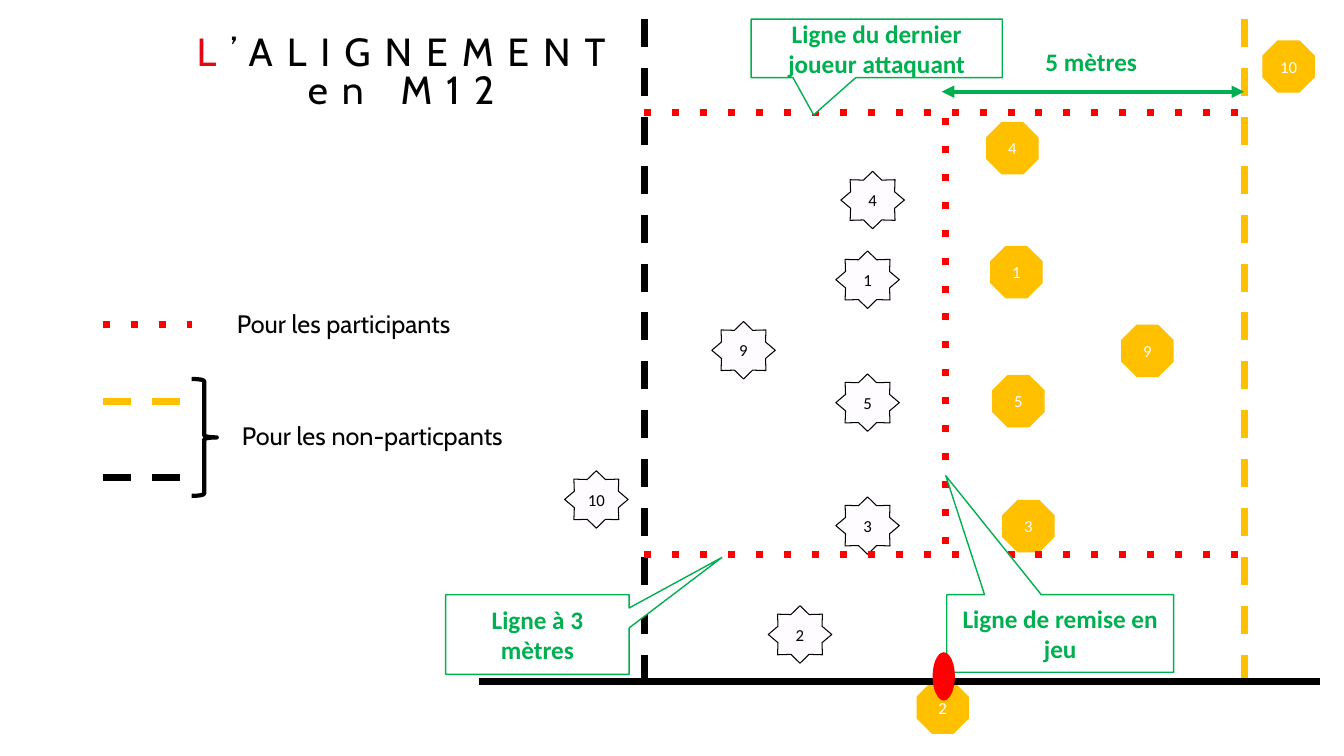
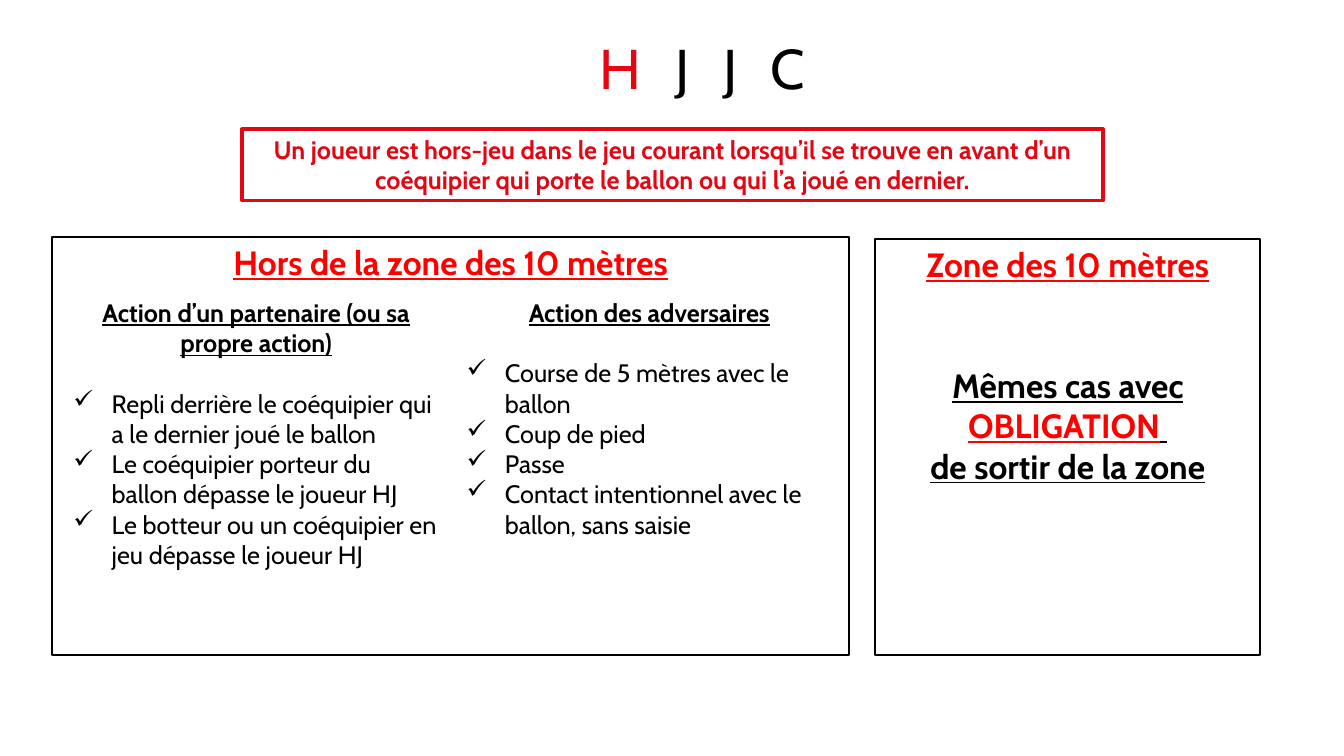
from lxml import etree
from pptx import Presentation
from pptx import util as u
from pptx.dml.color import RGBColor
from pptx.enum import shapes, text
from pptx.oxml.ns import qn

BLACK, WHITE, RED, BRAND_RED = "000000", "FFFFFF", "FF0000", "E30613"
GOLD, GREEN, PALE = "FFC000", "00B050", "FEFCFF"
SHAPE, ALIGN, ANCHOR = shapes.MSO_SHAPE, text.PP_ALIGN, text.MSO_ANCHOR

CABIN = {"name": "Cabin", "size": u.Pt(18)}
HEADING = {**CABIN, "bold": True, "underline": True}
BIG_HEADING = {**HEADING, "size": u.Pt(24)}
LABEL = {"name": "Calibri", "size": u.Pt(18), "bold": True}
NUMBER = {"name": "Calibri", "size": u.Pt(12)}
CENTERED = {"alignment": ALIGN.CENTER}
MIDDLE = {"vertical_anchor": ANCHOR.MIDDLE}

GOLD_PLAYERS = [("4", 9.78, 1.21), ("1", 9.82, 2.44), ("5", 9.84, 3.72), ("3", 9.94, 4.96),
                ("2", 9.09, 6.76), ("9", 11.12, 3.22), ("10", 12.52, 0.4)]
PALE_PLAYERS = [("4", 8.34, 1.7), ("1", 8.29, 2.49), ("5", 8.29, 3.71), ("3", 8.29, 4.93),
                ("2", 7.62, 6.01), ("9", 7.06, 3.19), ("10", 5.6, 4.67)]
LEFT_LINE, RIGHT_LINE, TOUCH_LINE = 6.39, 12.34, 6.76
PITCH_LINES = [
    ((RIGHT_LINE, 0.19), (RIGHT_LINE, TOUCH_LINE), GOLD, "dash"),
    ((LEFT_LINE, 0.19), (LEFT_LINE, TOUCH_LINE), BLACK, "dash"),
    ((LEFT_LINE, 5.5), (RIGHT_LINE, 5.5), RED, "dot"),
    ((LEFT_LINE, 1.12), (RIGHT_LINE, 1.12), RED, "dot"),
    ((9.38, 1.17), (9.38, 5.54), RED, "dot"),
    ((4.75, TOUCH_LINE), (13.09, TOUCH_LINE), BLACK, "solid"),
]
LEGEND_LINES = [(RED, "dot"), (GOLD, "dash"), (BLACK, "dash")]
CALLOUTS = [
    ("Ligne à 3 mètres", (4.42, 5.9, 1.82, 0.79), (7.16, 5.53)),
    ("Ligne de remise en jeu", (9.39, 5.9, 2.25, 0.77), (9.38, 4.72)),
    ("Ligne du dernier joueur attaquant", (7.45, 0.19, 2.49, 0.58), (8.07, 1.14)),
]
ACTIONS = [
    (4.53, "Action des adversaires",
     ["Course de 5 mètres avec le ballon", "Coup de pied", "Passe",
      "Contact intentionnel avec le ballon, sans saisie"]),
    (0.63, "Action d’un partenaire (ou sa propre action)",
     ["Repli derrière le coéquipier qui a le dernier joué le ballon",
      "Le coéquipier porteur du ballon dépasse le joueur HJ",
      "Le botteur ou un coéquipier en jeu dépasse le joueur HJ"]),
]


def color(value):
    """Turn a hex string into a colour."""
    return RGBColor.from_string(value)


def inches(values):
    """Convert numbers to lengths."""
    return [u.Inches(value) for value in values]


def apply(target, values):
    """Set each attribute named in a dict."""
    for name, value in values.items():
        setattr(target, name, value)


def setup_frame(shape, margins=(0.1, 0.05, 0.1, 0.05), **values):
    """Give a shape's text frame its wrapping, margins and anchor."""
    frame = shape.text_frame
    sides = ("margin_left", "margin_top", "margin_right", "margin_bottom")
    apply(frame, {"word_wrap": True, "auto_size": text.MSO_AUTO_SIZE.NONE,
                  "vertical_anchor": ANCHOR.TOP, **dict(zip(sides, inches(margins))), **values})
    return frame


def add_para(frame, spans, font, layout=CENTERED, spacing=0):
    """Write coloured spans as the next paragraph of a frame."""
    first = frame.paragraphs[0]
    para = frame.add_paragraph() if first.runs else first
    apply(para, layout)
    for words, hue in spans:
        span = para.add_run()
        span.text = words
        apply(span.font, font)
        span.font.color.rgb = color(hue)
        if spacing:
            span._r.get_or_add_rPr().set("spc", str(spacing * 100))
    return para


def add_bullet(para):
    """Put a hanging check mark before a paragraph."""
    props = para._p.get_or_add_pPr()
    props.set("marL", str(u.Inches(0.38)))
    props.set("indent", str(-u.Inches(0.38)))
    tint = etree.SubElement(props, qn("a:buClr"))
    etree.SubElement(tint, qn("a:srgbClr"), val=BLACK)
    etree.SubElement(props, qn("a:buChar"), char="✓")


def add_title(slide, place, lines, size, spacing):
    """Format the title placeholder, with its first letter in red."""
    title = slide.shapes.title
    apply(title, dict(zip(("left", "top", "width", "height"), inches(place))))
    frame = setup_frame(title, (0, 0.21, 0, 0), **MIDDLE)
    font = {**CABIN, "size": u.Pt(size)}
    layout = {**CENTERED, "line_spacing": 0.8}
    for index, line in enumerate(lines):
        spans = [(line, BLACK)] if index else [(line[0], BRAND_RED), (line[1:], BLACK)]
        add_para(frame, spans, font, layout, spacing)


def add_figure(slide, kind, place, fill=None, outline=None, weight=1):
    """Add a preset shape with an optional fill and outline."""
    shape = slide.shapes.add_shape(kind, *inches(place))
    shape.shadow.inherit = False
    if fill:
        shape.fill.solid()
        shape.fill.fore_color.rgb = color(fill)
    else:
        shape.fill.background()
    if outline:
        shape.line.color.rgb = color(outline)
        shape.line.width = u.Pt(weight)
    else:
        shape.line.fill.background()
    return shape


def add_line(slide, start, end, hue, dash="solid", weight=5, arrows=False):
    """Add a straight line, with arrowheads at both ends on request."""
    line = slide.shapes.add_connector(shapes.MSO_CONNECTOR.STRAIGHT, *inches(start + end))
    line.line.color.rgb = color(hue)
    line.line.width = u.Pt(weight)
    props = line.element.spPr
    stroke = props.find(qn("a:ln"))
    etree.SubElement(stroke, qn("a:prstDash"), val=dash)
    if arrows:
        for tag in ("a:headEnd", "a:tailEnd"):
            etree.SubElement(stroke, qn(tag), type="triangle")
    etree.SubElement(props, qn("a:effectLst"))


def add_text(slide, place, words, font, hue):
    """Add a one-paragraph text box."""
    box = slide.shapes.add_textbox(*inches(place))
    add_para(setup_frame(box), [(words, hue)], font, {})


def add_players(slide, players, kind, size, fill, ink, outline=None):
    """Add the numbered markers of one team."""
    for number, left, top in players:
        marker = add_figure(slide, kind, (left, top, *size), fill, outline, 0.75)
        add_para(setup_frame(marker, **MIDDLE), [(number, ink)], NUMBER)


def add_callout(slide, words, place, tip):
    """Add a green callout pointing at a tip."""
    callout = add_figure(slide, SHAPE.RECTANGULAR_CALLOUT, place, WHITE, GREEN)
    for axis in range(2):
        start, extent = place[axis], place[axis + 2]
        callout.adjustments[axis] = (tip[axis] - start - extent / 2) / extent
    add_para(setup_frame(callout, **MIDDLE), [(words, GREEN)], LABEL)


def add_panel(slide, place, heading):
    """Add an outlined panel with a red heading and return its frame."""
    panel = add_figure(slide, SHAPE.RECTANGLE, place, None, BLACK, 1.5)
    frame = setup_frame(panel)
    add_para(frame, [(heading, RED)], BIG_HEADING)
    return frame


def add_actions(slide, left, heading, actions):
    """Add a column of checked actions below a heading."""
    box = slide.shapes.add_textbox(*inches((left, 2.9, 3.82, 3.2)))
    frame = setup_frame(box)
    add_para(frame, [(heading, BLACK)], HEADING)
    for index, action in enumerate(actions):
        layout = {"space_before": u.Pt(0 if index else 21.6)}
        add_bullet(add_para(frame, [(action, BLACK)], CABIN, layout))


def build_lineout(slide):
    """Draw the lineout diagram and its legend."""
    add_title(slide, (1.75, 0.14, 4.46, 0.98), ["L’ALIGNEMENT", "en M12"], 28, 10)
    add_players(slide, GOLD_PLAYERS, SHAPE.OCTAGON, (0.52, 0.52), GOLD, WHITE)
    add_players(slide, PALE_PLAYERS, SHAPE.STAR_8_POINT, (0.63, 0.57), PALE, BLACK, BLACK)
    for line in PITCH_LINES:
        add_line(slide, *line)
    for callout in CALLOUTS:
        add_callout(slide, *callout)
    add_line(slide, (9.34, 0.91), (RIGHT_LINE, 0.91), GREEN, weight=3, arrows=True)
    add_text(slide, (10.27, 0.41, 1.32, 0.4), "5 mètres", LABEL, GREEN)
    add_figure(slide, SHAPE.OVAL, (9.25, 6.47, 0.22, 0.48), RED)
    for index, (hue, dash) in enumerate(LEGEND_LINES):
        top = 3.22 + 0.76 * index
        add_line(slide, (1.02, top), (1.9, top), hue, dash)
    add_figure(slide, SHAPE.RIGHT_BRACE, (1.9, 3.76, 0.25, 1.16), None, BLACK, 3)
    add_text(slide, (2.3, 4.12, 3.02, 0.41), "Pour les non-particpants", CABIN, BLACK)
    add_text(slide, (2.25, 3.01, 3.02, 0.41), "Pour les participants", CABIN, BLACK)


def build_offside(slide):
    """Lay out the offside rule and its two zones."""
    add_title(slide, (2.97, 0.14, 8, 0.96), ["HJJC"], 40, 24)
    rule = add_figure(slide, SHAPE.RECTANGLE, (2.4, 1.28, 8.54, 0.71), None, BRAND_RED, 2.25)
    add_para(setup_frame(rule), [(
        "Un joueur est hors-jeu dans le jeu courant lorsqu’il se trouve en avant d’un "
        "coéquipier qui porte le ballon ou qui l’a joué en dernier.", BRAND_RED)],
        {**CABIN, "bold": True})
    add_panel(slide, (0.52, 2.35, 7.9, 4.15), "Hors de la zone des 10 mètres")
    zone = add_panel(slide, (8.68, 2.37, 3.82, 4.13), "Zone des 10 mètres")
    duty = [("Mêmes cas avec ", BLACK), ("OBLIGATION", RED), (" ", BLACK)]
    add_para(zone, duty, BIG_HEADING, {**CENTERED, "space_before": u.Pt(57.6)})
    add_para(zone, [("de sortir de la zone", BLACK)], BIG_HEADING)
    for column in ACTIONS:
        add_actions(slide, *column)


def main():
    """Build and save the deck."""
    deck = Presentation()
    deck.slide_width, deck.slide_height = inches((13.33, 7.5))
    title_only = deck.slide_layouts[5]
    for build in (build_lineout, build_offside):
        build(deck.slides.add_slide(title_only))
    deck.save("out.pptx")


if __name__ == "__main__":
    main()
